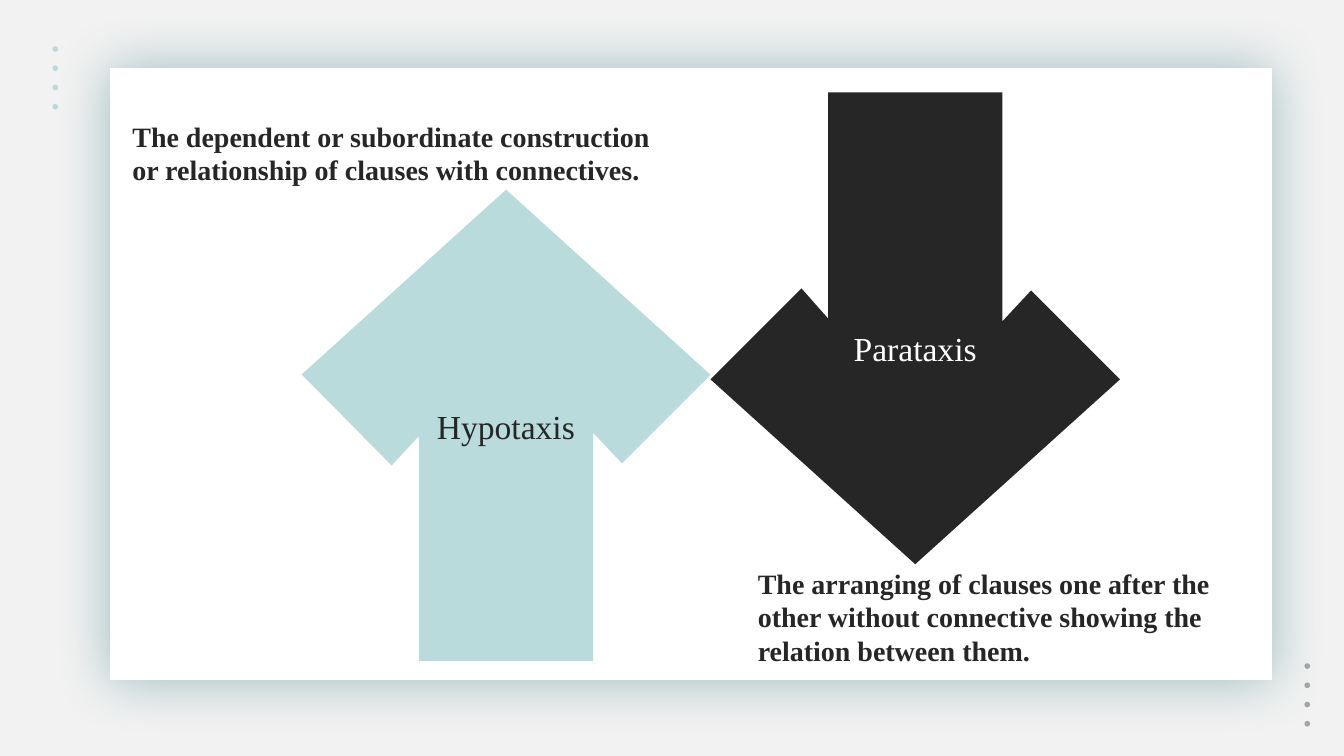
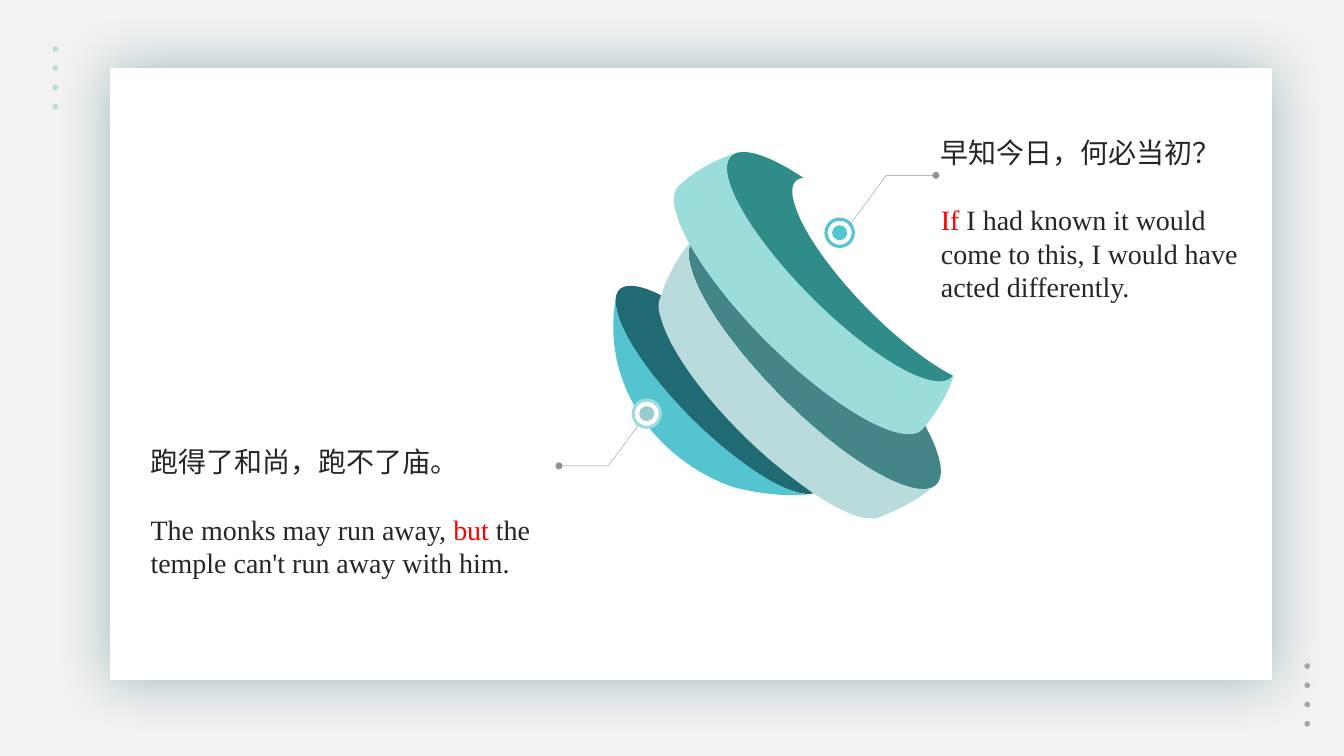
from dataclasses import dataclass

import lxml.etree
import pptx
import pptx.dml.color
import pptx.enum.shapes
import pptx.enum.text
import pptx.oxml.ns
import pptx.util

Pt = pptx.util.Pt
qn = pptx.oxml.ns.qn
OVAL = pptx.enum.shapes.MSO_SHAPE.OVAL
RECTANGLE = pptx.enum.shapes.MSO_SHAPE.RECTANGLE


@dataclass(frozen=True)
class Theme:
    page: str = "F2F2F2"
    white: str = "FFFFFF"
    ink: str = "262626"
    accent: str = "FF0000"
    grey: str = "A6A6A6"
    pale: str = "BADBDC"
    mint: str = "9BDDDA"
    soft: str = "97CECD"
    sky: str = "54C4D0"
    deep: str = "1F6A73"
    slate: str = "448587"
    green: str = "308C88"
    latin: str = "Times New Roman"
    chinese: str = "Noto Sans CJK SC"
    label: int = 48
    body: int = 40
    leading: float = 1.2


def rgb(colour):
    return pptx.dml.color.RGBColor.from_string(colour)


def cubic(start, first, second, end, steps=16):
    """Points along a Bezier curve, without its start."""
    for step in range(1, steps + 1):
        t = step / steps
        u = 1 - t
        yield tuple(u**3 * a + 3 * u * u * t * b + 3 * u * t * t * c + t**3 * d
                    for a, b, c, d in zip(start, first, second, end))


def curved(points):
    """Turn a start point and triples of curve points into an outline."""
    outline = [points[0]]
    for i in range(0, len(points) - 1, 3):
        outline.extend(cubic(*points[i:i + 4]))
    return outline


class Deck:
    def __init__(self, theme):
        self.theme = theme
        self.presentation = pptx.Presentation()
        self.presentation.slide_width = Pt(1920)
        self.presentation.slide_height = Pt(1080)
        background = self.presentation.slide_master.background.fill
        background.solid()
        background.fore_color.rgb = rgb(theme.page)
        self.slide = None

    def new_slide(self):
        """Start a slide with the corner dots and the white card."""
        theme = self.theme
        layout = self.presentation.slide_layouts[6]
        self.slide = self.presentation.slides.add_slide(layout)
        for left, top, colour in ((75, 66, theme.pale), (1863.5, 947.5, theme.grey)):
            dots = self.slide.shapes.add_group_shape().shapes
            for i in range(4):
                self.shape(OVAL, left, top + 27.5 * i, 8, 8, colour, into=dots)
        card = self.shape(RECTANGLE, 159, 99.5, 1656, 870, theme.white, theme.white, 5)
        lxml.etree.SubElement(card._element.spPr.find(qn("a:ln")), qn("a:miter"), lim="800000")
        self.glow(card)

    def paint(self, shape, fill=None, line=None, width=1):
        shape.shadow.inherit = False
        if fill:
            shape.fill.solid()
            shape.fill.fore_color.rgb = rgb(fill)
        else:
            shape.fill.background()
        if line:
            shape.line.color.rgb = rgb(line)
            shape.line.width = Pt(width)
        else:
            shape.line.fill.background()
        return shape

    def glow(self, shape):
        effects = shape._element.spPr.find(qn("a:effectLst"))
        shadow = lxml.etree.SubElement(effects, qn("a:outerShdw"), blurRad=str(Pt(82)),
                                       dist="0", dir="0", algn="ctr", rotWithShape="0")
        colour = lxml.etree.SubElement(shadow, qn("a:srgbClr"), val=self.theme.deep)
        lxml.etree.SubElement(colour, qn("a:alpha"), val="40000")

    def shape(self, kind, left, top, width, height, fill, line=None, weight=1, into=None):
        shapes = into or self.slide.shapes
        shape = shapes.add_shape(kind, Pt(left), Pt(top), Pt(width), Pt(height))
        return self.paint(shape, fill, line, weight)

    def outline(self, points, fill=None, line=None, width=1, close=True):
        corners = [(Pt(x), Pt(y)) for x, y in points]
        builder = self.slide.shapes.build_freeform(*corners[0])
        builder.add_line_segments(corners[1:], close=close)
        return self.paint(builder.convert_to_shape(), fill, line, width)

    def leader(self, points):
        """A thin bent line that ends in a dot."""
        bend = self.outline(points, line=self.theme.ink, width=0.5, close=False)
        line = bend._element.spPr.find(qn("a:ln"))
        colour = line.find(qn("a:solidFill"))[0]
        lxml.etree.SubElement(colour, qn("a:alpha"), val="50000")
        lxml.etree.SubElement(line, qn("a:tailEnd"), type="oval", w="lg", len="lg")

    def target(self, x, y, ring, core):
        parts = self.slide.shapes.add_group_shape().shapes
        for size, fill, line in ((39, self.theme.white, ring), (21.5, core, None)):
            self.shape(OVAL, x - size / 2, y - size / 2, size, size, fill, line, 4.5, parts)

    def text(self, left, top, width, height, paragraphs, size=None, colour=None,
             bold=False, centred=False):
        """Each paragraph is a list of (words, colour or None) runs."""
        theme = self.theme
        size = size or theme.body
        box = self.slide.shapes.add_textbox(Pt(left), Pt(top), Pt(width), Pt(height))
        frame = box.text_frame
        frame.word_wrap = True
        frame.auto_size = pptx.enum.text.MSO_AUTO_SIZE.SHAPE_TO_FIT_TEXT
        if centred:
            frame.vertical_anchor = pptx.enum.text.MSO_ANCHOR.MIDDLE
        for i, runs in enumerate(paragraphs):
            paragraph = frame.add_paragraph() if i else frame.paragraphs[0]
            paragraph.line_spacing = Pt(size * theme.leading)
            if i:
                paragraph.space_before = Pt(size * theme.leading)
            if centred:
                paragraph.alignment = pptx.enum.text.PP_ALIGN.CENTER
            font = paragraph.font
            font.size = Pt(size)
            font.bold = bold
            font.name = theme.latin
            font.color.rgb = rgb(colour or theme.ink)
            defaults = paragraph._p.pPr.find(qn("a:defRPr"))
            lxml.etree.SubElement(defaults, qn("a:ea"), typeface=theme.chinese)
            for words, run_colour in runs:
                run = paragraph.add_run()
                run.text = words
                if run_colour:
                    run.font.color.rgb = rgb(run_colour)


# Arrow outlines
HYPOTAXIS_ARROW = [(431, 535), (723, 271), (1015, 535.5), (888.5, 662), (847.5, 618.5),
                   (847.5, 944), (598.5, 944), (598.5, 623), (559.5, 665)]
PARATAXIS_ARROW = [(1015, 542), (1307.5, 806), (1600, 542), (1473, 415), (1432, 459),
                   (1432, 132), (1183, 132), (1183, 455), (1145, 412)]

# Sliced globe: a start point, then two controls and an end for each curve
BOWL = [(1158, 706), (1139, 708), (1101, 691), (1055, 656),
        (974, 595), (897, 500), (882, 446), (880, 438), (880, 432), (880, 425),
        (868, 490), (884, 553), (924, 607), (955, 647), (1000, 680), (1048, 696),
        (1085, 705), (1120, 710), (1158, 706)]
BOWL_RIM = [(1174, 667), (1189, 723), (1135, 717), (1055, 656),
            (974, 595), (896, 500), (882, 446), (867, 391), (920, 397), (1001, 458),
            (1081, 519), (1158, 613), (1174, 667)]
MIDDLE_RIM = [(1341, 653), (1360, 719), (1295, 714), (1197, 638),
              (1099, 563), (1005, 449), (987, 382), (968, 316), (1033, 323), (1131, 398),
              (1229, 472), (1323, 586), (1341, 653)]
MIDDLE_BAND = [(1197, 638), (1099, 563), (1005, 449), (986, 382),
               (984, 369), (982, 359), (986, 352), (986, 348), (988, 346), (989, 343),
               (968, 366), (952, 397), (943, 426), (940, 433), (940, 442), (944, 454),
               (960, 515), (1045, 618), (1135, 685), (1191, 728), (1234, 747), (1256, 739),
               (1287, 727), (1313, 713), (1336, 693), (1335, 694), (1333, 696), (1330, 697),
               (1307, 705), (1258, 684), (1197, 638)]
TOP_RIM = [(1363, 504), (1380, 564), (1322, 559), (1233, 490),
           (1144, 422), (1058, 320), (1041, 258), (1025, 198), (1084, 205), (1173, 272),
           (1261, 341), (1347, 444), (1363, 504)]
TOP_BAND = [(1318, 613), (1349, 577), (1361, 544), (1364, 531),
            (1355, 559), (1304, 544), (1233, 490), (1144, 421), (1058, 318), (1041, 257),
            (1035, 235), (1040, 222), (1053, 218), (1008, 232), (981, 255), (971, 264),
            (963, 271), (960, 284), (966, 305), (984, 370), (1078, 485), (1176, 559),
            (1248, 614), (1302, 632), (1318, 613)]
TOP_CAP = [(1428, 534), (1437, 456), (1410, 384), (1363, 329),
           (1310, 272), (1230, 242), (1148, 254), (1133, 256), (1128, 268), (1135, 291),
           (1150, 345), (1227, 440), (1307, 501), (1374, 553), (1423, 564), (1428, 534)]


def definitions_slide(deck):
    theme = deck.theme
    deck.new_slide()

    # Arrows with their terms
    deck.outline(HYPOTAXIS_ARROW, theme.pale)
    deck.text(617, 576, 230, 65.5, [[("Hypotaxis", None)]], theme.label)
    deck.outline(PARATAXIS_ARROW, theme.ink)
    deck.text(1197.5, 464.5, 220, 65.5, [[("Parataxis", None)]], theme.label,
              theme.white, centred=True)

    # Definitions
    deck.text(1075.5, 805.5, 741, 152.5,
              [[("The arranging of clauses one after the other without connective "
                 "showing the relation between them.", None)]], bold=True)
    deck.text(182, 167, 754, 104.5,
              [[("The dependent or subordinate construction or relationship of clauses "
                 "with connectives.", None)]], bold=True)


def examples_slide(deck):
    theme = deck.theme
    deck.new_slide()

    # Globe, from back to front
    for part, colour in ((BOWL, theme.sky), (BOWL_RIM, theme.deep),
                         (MIDDLE_RIM, theme.slate), (MIDDLE_BAND, theme.pale),
                         (TOP_RIM, theme.green), (TOP_BAND, theme.mint),
                         (TOP_CAP, theme.white)):
        deck.outline(curved(part), colour)

    # Upper example
    deck.text(1337, 190, 477.5, 250,
              [[("早知今日，何必当初？", None)],
               [("If", theme.accent),
                (" I had known it would come to this, I would have acted differently.",
                 None)]])
    deck.leader([(1211, 325.5), (1266, 250.5), (1337, 250.5)])
    deck.target(1199.5, 332.5, theme.sky, theme.sky)

    # Lower example
    deck.leader([(924.5, 590.5), (869, 665.5), (798.5, 665.5)])
    deck.target(924, 591, theme.mint, theme.soft)
    deck.text(208, 632, 633, 201,
              [[("跑得了和尚，跑不了庙。", None)],
               [("The monks may run away, ", None), ("but", theme.accent),
                (" the temple can't run away with him.", None)]])


def main():
    deck = Deck(Theme())
    definitions_slide(deck)
    examples_slide(deck)
    deck.presentation.save("out.pptx")


if __name__ == "__main__":
    main()
